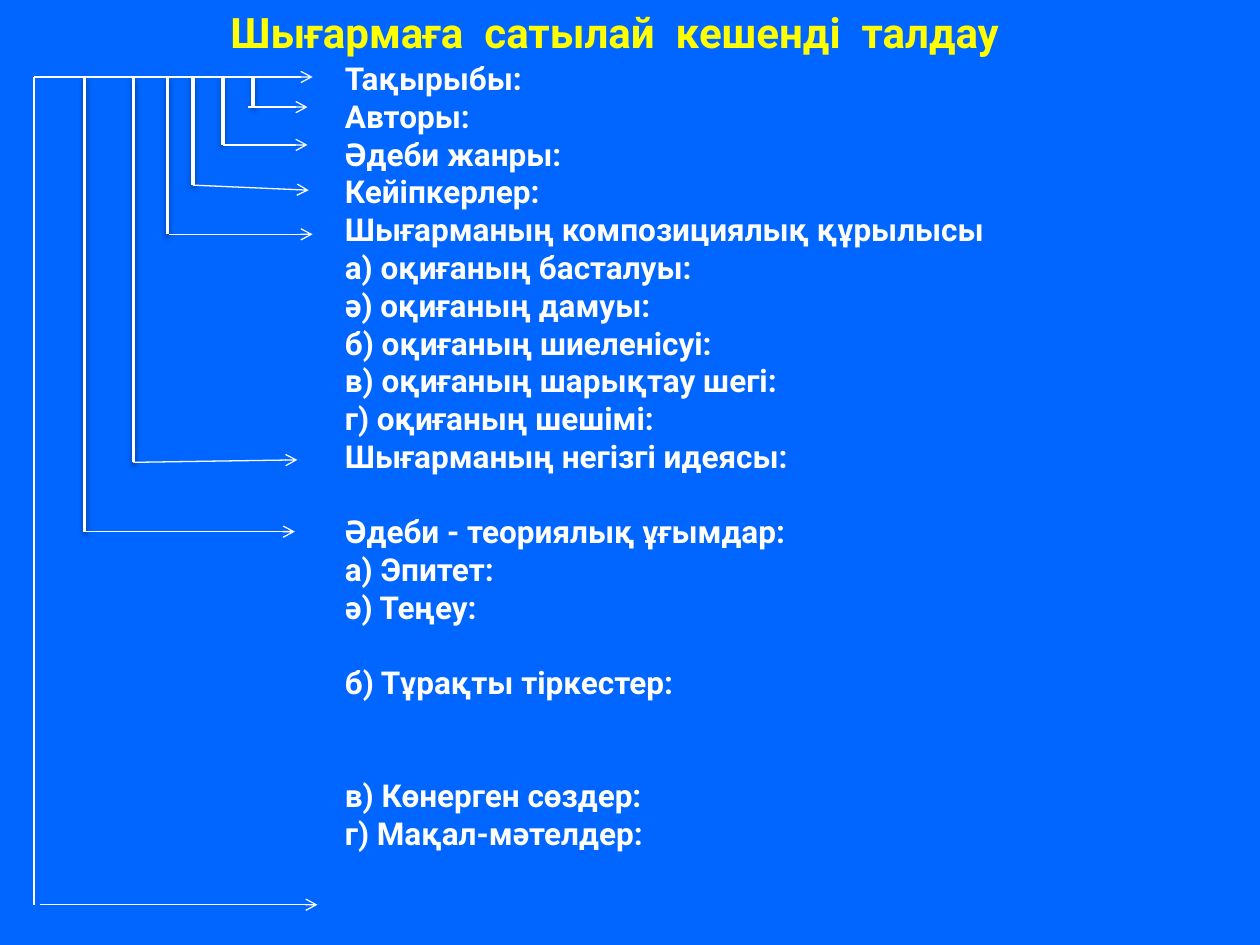
from collections import namedtuple
from dataclasses import dataclass

from lxml.etree import SubElement
from pptx import Presentation
from pptx.dml.color import RGBColor
from pptx.enum.shapes import MSO_CONNECTOR
from pptx.enum.text import MSO_ANCHOR, PP_ALIGN
from pptx.oxml.ns import qn
from pptx.util import Pt


@dataclass(frozen=True)
class Theme:
    font: str = "Roboto"
    background: str = "0066FF"
    heading: str = "FFFF00"
    ink: str = "FFFFFF"
    shadow: str = "000000"
    title_size: float = 24
    body_size: float = 18
    row_height: float = 21.5
    thin: float = 0.75
    thick: float = 2


Branch = namedtuple("Branch", "stem bottom start end_x end_y")

TITLE = "Шығармаға  сатылай  кешенді  талдау"
# Each entry: wording, free rows above it
OUTLINE = [
    ("Тақырыбы:", 0),
    ("Авторы:", 0),
    ("Әдеби жанры:", 0),
    ("Кейіпкерлер:", 0),
    ("Шығарманың композициялық құрылысы", 0),
    ("а) оқиғаның басталуы:", 0),
    ("ә) оқиғаның дамуы:", 0),
    ("б) оқиғаның шиеленісуі:", 0),
    ("в) оқиғаның шарықтау шегі:", 0),
    ("г) оқиғаның шешімі:", 0),
    ("Шығарманың негізгі идеясы:", 0),
    ("Әдеби - теориялық ұғымдар:", 1),
    ("а) Эпитет:", 0),
    ("ә) Теңеу:", 0),
    ("б) Тұрақты тіркестер:", 1),
    ("в) Көнерген сөздер:", 2),
    ("г) Мақал-мәтелдер:", 0),
]
TRUNK_X, TRUNK_TOP, TRUNK_BOTTOM = 19.5, 44, 517
BRANCHES = [
    Branch(144.7, 61.2, 141.8, 175.7, 61.2),
    Branch(127.4, 82.8, 127.4, 175.7, 82.8),
    Branch(110.2, 105.8, 110.2, 176.4, 108.7),
    Branch(95.8, 133.9, 96.5, 178.6, 133.9),
    Branch(76.3, 264.2, 76.3, 169.9, 262.8),
    Branch(48.2, 303.8, 48.2, 168.5, 303.8),
]


class SlideBuilder:
    def __init__(self, slide, theme):
        self.slide = slide
        self.theme = theme
        fill = slide.background.fill
        fill.solid()
        fill.fore_color.rgb = RGBColor.from_string(theme.background)

    def add_wording(self, paragraph, wording, size, color):
        run = paragraph.add_run()
        run.text = wording
        formats = {"name": self.theme.font, "size": Pt(size), "bold": True}
        for attribute, value in formats.items():
            setattr(run.font, attribute, value)
        run.font.color.rgb = RGBColor.from_string(color)

    def title(self, wording, left, top, width, height):
        heading = self.slide.shapes.title
        box = {"left": left, "top": top, "width": width, "height": height}
        for attribute, value in box.items():
            setattr(heading, attribute, Pt(value))
        heading.text_frame.vertical_anchor = MSO_ANCHOR.TOP
        paragraph = heading.text_frame.paragraphs[0]
        paragraph.alignment = PP_ALIGN.CENTER
        self.add_wording(paragraph, wording, self.theme.title_size, self.theme.heading)

    def outline(self, entries, left, top, width, height):
        box = self.slide.shapes.add_textbox(Pt(left), Pt(top), Pt(width), Pt(height))
        frame = box.text_frame
        frame.word_wrap = True
        for index, (wording, free_rows) in enumerate(entries):
            paragraph = frame.add_paragraph() if index else frame.paragraphs[0]
            paragraph.space_before = Pt(free_rows * self.theme.row_height)
            self.add_wording(paragraph, wording, self.theme.body_size, self.theme.ink)

    def line(self, x1, y1, x2, y2, weight):
        """Draw a plain line; return it with its empty effect list."""
        connector = self.slide.shapes.add_connector(
            MSO_CONNECTOR.STRAIGHT, Pt(x1), Pt(y1), Pt(x2), Pt(y2))
        connector.line.color.rgb = RGBColor.from_string(self.theme.ink)
        connector.line.width = Pt(weight)
        effects = SubElement(connector._element.spPr, qn("a:effectLst"))
        return connector, effects

    def arrow(self, x1, y1, x2, y2):
        connector, _ = self.line(x1, y1, x2, y2, self.theme.thin)
        SubElement(connector.line._get_or_add_ln(), qn("a:tailEnd"), type="arrow")

    def stem(self, x, bottom, top):
        """Draw a thick vertical line with a soft shadow below it."""
        _, effects = self.line(x, bottom, x, top, self.theme.thick)
        shadow = SubElement(
            effects, qn("a:outerShdw"), blurRad=str(Pt(3.1)), dist=str(Pt(1.6)),
            dir="5400000", rotWithShape="0")
        color = SubElement(shadow, qn("a:srgbClr"), val=self.theme.shadow)
        SubElement(color, qn("a:alpha"), val="38000")


def main():
    presentation = Presentation()
    presentation.slide_width, presentation.slide_height = Pt(720), Pt(540)
    title_only = presentation.slide_layouts[5]
    theme = Theme()
    builder = SlideBuilder(presentation.slides.add_slide(title_only), theme)

    builder.title(TITLE, 76.3, 0, 550, 36.7)
    builder.outline(OUTLINE, 190, 30.2, 437, 465)

    builder.line(TRUNK_X, TRUNK_TOP, TRUNK_X, TRUNK_BOTTOM, theme.thin)
    builder.arrow(TRUNK_X, TRUNK_TOP, 178.6, TRUNK_TOP)
    builder.arrow(23, TRUNK_BOTTOM, 181.4, TRUNK_BOTTOM)
    for branch in BRANCHES:
        builder.stem(branch.stem, branch.bottom, TRUNK_TOP)
        builder.arrow(branch.start, branch.bottom, branch.end_x, branch.end_y)

    presentation.save("out.pptx")


if __name__ == "__main__":
    main()
